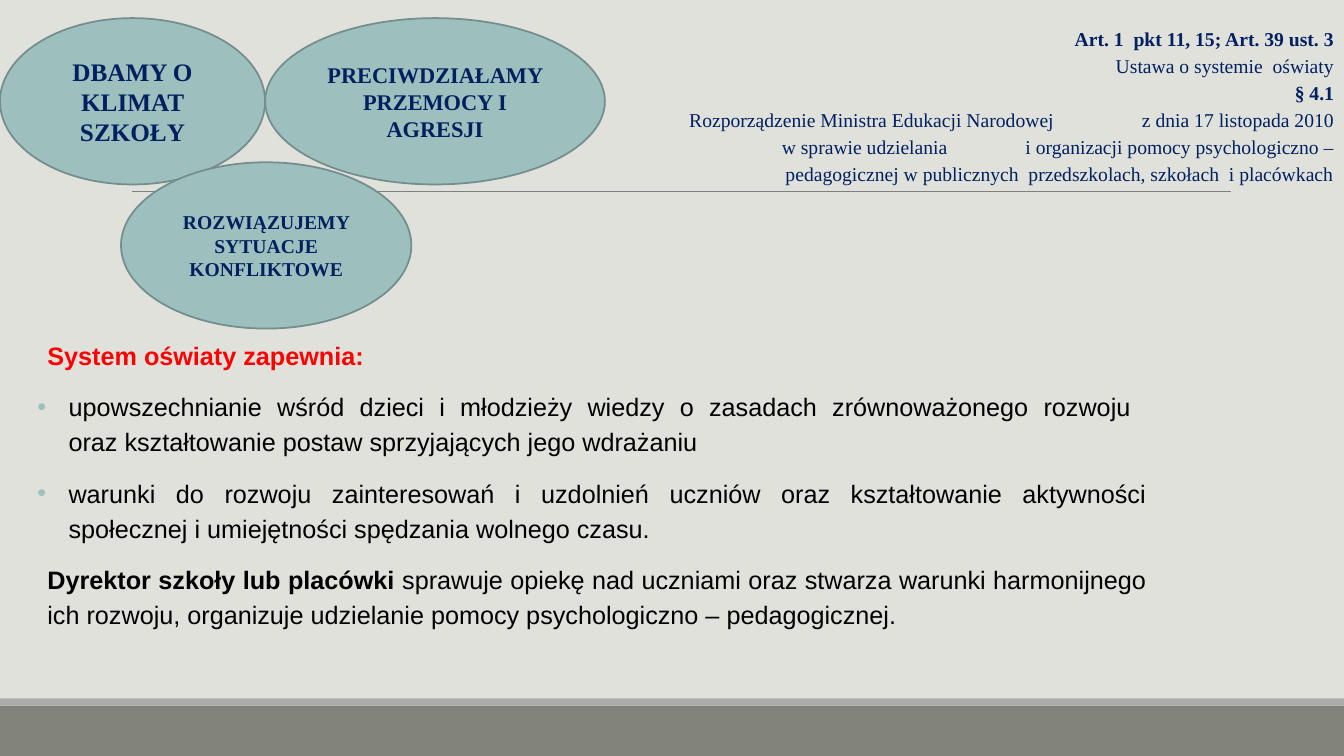
from lxml import etree
from pptx import Presentation
from pptx.dml.color import RGBColor
from pptx.enum import shapes, text
from pptx.oxml.ns import qn
from pptx.util import Inches, Pt

HUES = {"page": "E1E1DB", "foot": "82847C", "strip": "ACADA8", "rule": "808080",
        "teal": "9DBFBE", "edge": "748D8D", "navy": "002060", "red": "FF0000",
        "black": "000000"}
SERIF, SANS = "Times New Roman", "Arial"
WIDE, HIGH = 13.33, 7.5


def hue(name):
    return RGBColor.from_string(HUES[name])


def style(run, face, size, color, bold):
    font = run.font
    font.name, font.size, font.bold = face, Pt(size), bold
    font.color.rgb = hue(color)


deck = Presentation()
deck.slide_width, deck.slide_height = Inches(WIDE), Inches(HIGH)
slide = deck.slides.add_slide(deck.slide_layouts[1])
slide.background.fill.solid()
slide.background.fill.fore_color.rgb = hue("page")
title = slide.shapes.title.element
title.getparent().remove(title)
body = slide.placeholders[1]

# Footer bands
for top, tall, color in ((7, 0.5, "foot"), (6.93, 0.07, "strip")):
    band = slide.shapes.add_shape(shapes.MSO_SHAPE.RECTANGLE, 0, Inches(top),
                                  Inches(WIDE), Inches(tall))
    band.shadow.inherit = False
    band.fill.solid()
    band.fill.fore_color.rgb = hue(color)
    band.line.fill.background()

# Thin rule under the heading area
rule = slide.shapes.add_connector(shapes.MSO_CONNECTOR.STRAIGHT, Inches(1.31),
                                  Inches(1.9), Inches(12.21), Inches(1.9))
rule.line.color.rgb = hue("rule")
rule.line.width = Pt(0.5)
etree.SubElement(rule.element.spPr, qn("a:effectLst"))

# Body text: (bulleted, [(words, color, bold), ...])
items = [
    (False, [("System oświaty zapewnia:", "red", True)]),
    (True, [("upowszechnianie wśród dzieci i młodzieży wiedzy o zasadach "
             "zrównoważonego rozwoju \voraz kształtowanie postaw "
             "sprzyjających jego wdrażaniu", "black", False)]),
    (True, [("warunki do rozwoju zainteresowań i uzdolnień uczniów oraz "
             "kształtowanie aktywności społecznej i umiejętności spędzania "
             "wolnego czasu.", "black", False)]),
    (False, [("Dyrektor szkoły lub placówki ", "black", True),
             ("sprawuje opiekę nad uczniami oraz stwarza warunki harmonijnego "
              "ich rozwoju, organizuje udzielanie pomocy psychologiczno – "
              "pedagogicznej.", "black", False)]),
]
body.left, body.top, body.width, body.height = map(Inches, (0.37, 2.78, 11, 4.4))
frame = body.text_frame
frame.auto_size = text.MSO_AUTO_SIZE.NONE
frame.vertical_anchor = text.MSO_ANCHOR.TOP
frame.margin_left = frame.margin_right = 0
frame.margin_top = Inches(0.55)
frame.text = "\n".join("".join(part[0] for part in parts[:1]) for _, parts in items)
for para, (dot, parts) in zip(frame.paragraphs, items):
    for words, _, _ in parts[1:]:
        para.add_run().text = words
    para.alignment = text.PP_ALIGN.JUSTIFY
    para.line_spacing, para.space_before = 1.15, Pt(12)
    props = para._p.get_or_add_pPr()
    inset = Inches(0.31 if dot else 0.1)
    props.set("marL", str(inset))
    props.set("indent", str(-inset if dot else 0))
    if dot:
        tint = etree.SubElement(props, qn("a:buClr"))
        etree.SubElement(tint, qn("a:srgbClr"), val=HUES["teal"])
        etree.SubElement(props, qn("a:buChar"), char="•")
    else:
        etree.SubElement(props, qn("a:buNone"))
    bolds = [part[1:] for part in parts]
    for i, run in enumerate(para.runs):
        color, bold = bolds[min(i, len(bolds) - 1)]
        style(run, SANS, 18, color, bold)

# Three ovals
ovals = [(0, 0.18, 2.63, 18, "DBAMY O KLIMAT SZKOŁY"),
         (2.63, 0.18, 3.37, 16, "PRECIWDZIAŁAMY PRZEMOCY I AGRESJI"),
         (1.2, 1.61, 2.88, 14, "ROZWIĄZUJEMY SYTUACJE KONFLIKTOWE")]
for left, top, width, size, words in ovals:
    oval = slide.shapes.add_shape(shapes.MSO_SHAPE.OVAL, Inches(left), Inches(top),
                                  Inches(width), Inches(1.65))
    oval.shadow.inherit = False
    oval.fill.solid()
    oval.fill.fore_color.rgb = hue("teal")
    oval.line.color.rgb = hue("edge")
    oval.line.width = Pt(1.25)
    oval.text_frame.text = words
    oval.text_frame.vertical_anchor = text.MSO_ANCHOR.MIDDLE
    para = oval.text_frame.paragraphs[0]
    para.alignment = text.PP_ALIGN.CENTER
    style(para.runs[0], SERIF, size, "navy", True)

# Legal basis: (bold, [(words, extra letter spacing in points), ...])
laws = [
    (True, [("Art. 1  pkt 11, 15; Art. 39 ust. 3", 0)]),
    (False, [("Ustawa o systemie  oświaty", 0)]),
    (True, [("§ 4.1", 0)]),
    (False, [("Rozporządzenie Ministra Edukacji Narodowej", 0), (" ", 59),
             ("z dnia 17 listopada 2010 w sprawie udzielania", 0), (" ", 52),
             ("i organizacji pomocy psychologiczno – pedagogicznej w publicznych  "
              "przedszkolach, szkołach  i placówkach", 0)]),
]
box = slide.shapes.add_textbox(Inches(WIDE / 2), Inches(0.18), Inches(WIDE / 2),
                               Inches(1.71))
frame = box.text_frame
frame.word_wrap = True
for i, (bold, parts) in enumerate(laws):
    para = frame.add_paragraph() if i else frame.paragraphs[0]
    para.alignment, para.line_spacing = text.PP_ALIGN.RIGHT, 1.15
    for words, gap in parts:
        run = para.add_run()
        run.text = words
        style(run, SERIF, 14, "navy", bold)
        if gap:
            run.font._element.set("spc", str(gap * 100))

deck.save("out.pptx")
